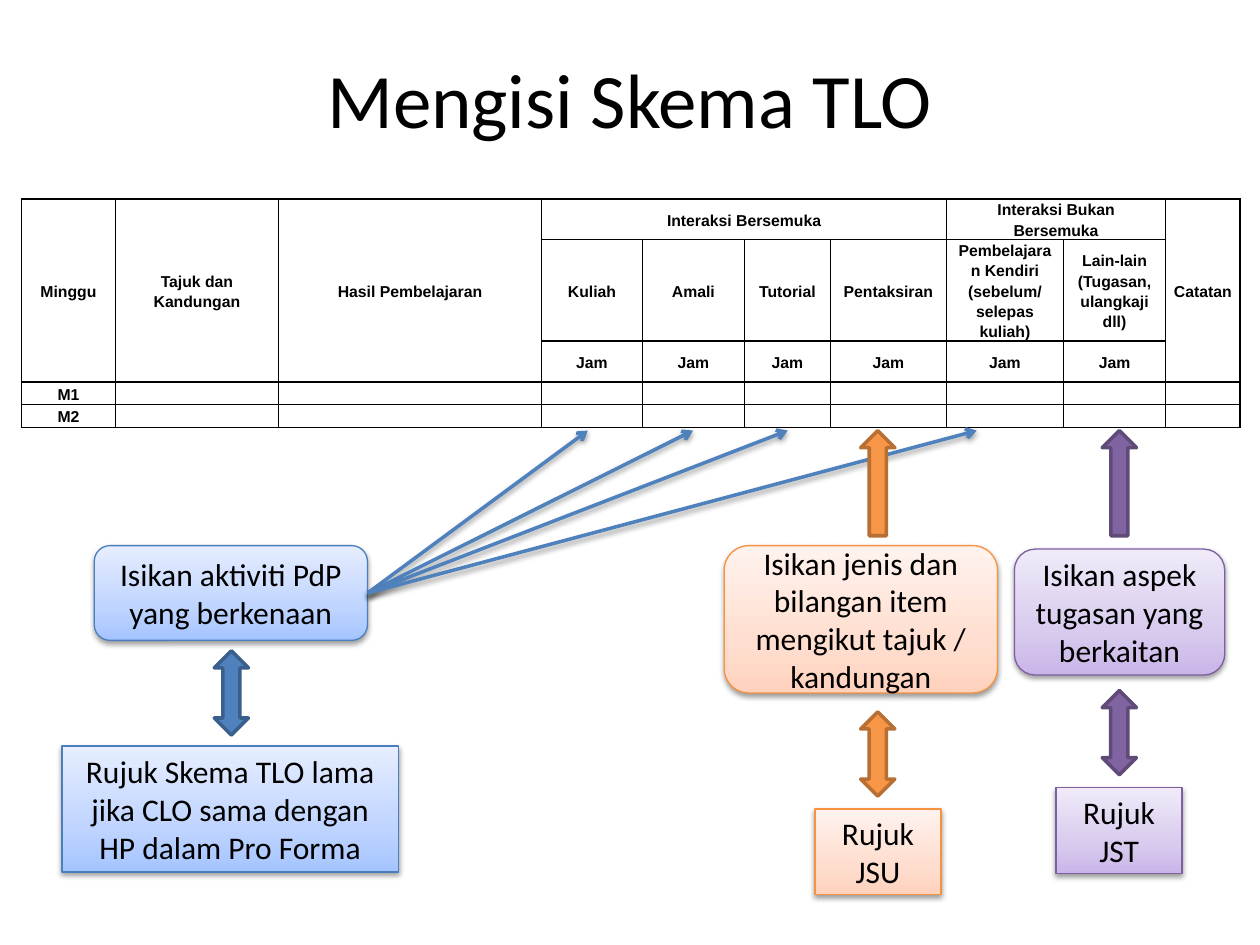
from copy import deepcopy
from dataclasses import dataclass

from lxml import etree
from pptx import Presentation
from pptx import util as u
from pptx.dml.color import RGBColor
from pptx.enum import shapes, text
from pptx.oxml import parse_xml
from pptx.oxml.ns import nsdecls, qn

BLACK = RGBColor(0x00, 0x00, 0x00)


@dataclass
class Palette:
    solid: RGBColor
    solid_edge: RGBColor
    box_edge: RGBColor
    gradient: tuple


BLUE = Palette(
    RGBColor(0x4F, 0x81, 0xBD), RGBColor(0x3A, 0x5F, 0x8C), RGBColor(0x4B, 0x7E, 0xBC),
    (RGBColor(0xA4, 0xC4, 0xFF), RGBColor(0xBF, 0xD4, 0xFF), RGBColor(0xE6, 0xEE, 0xFF)))
ORANGE = Palette(
    RGBColor(0xF7, 0x96, 0x46), RGBColor(0xB7, 0x6F, 0x34), RGBColor(0xF6, 0x92, 0x40),
    (RGBColor(0xFF, 0xD2, 0xBD), RGBColor(0xFF, 0xDE, 0xD0), RGBColor(0xFF, 0xF2, 0xED)))
PURPLE = Palette(
    RGBColor(0x80, 0x64, 0xA2), RGBColor(0x5F, 0x4A, 0x78), RGBColor(0x7D, 0x60, 0xA0),
    (RGBColor(0xC9, 0xB5, 0xE8), RGBColor(0xD8, 0xCB, 0xEE), RGBColor(0xF0, 0xEA, 0xF9)))

RECT = shapes.MSO_SHAPE.RECTANGLE
ROUNDED = shapes.MSO_SHAPE.ROUNDED_RECTANGLE
DOUBLE_ARROW = shapes.MSO_SHAPE.UP_DOWN_ARROW
DOWN_ARROW = shapes.MSO_SHAPE.DOWN_ARROW

TITLE_FONT = {"name": "Calibri", "size": u.Pt(44)}
BOX_FONT = {"name": "Calibri", "size": u.Pt(18)}
CELL_FONT = {"name": "Arial", "size": u.Pt(9), "bold": True}
CELL_FORMAT = {"margin_left": u.Cm(0.16), "margin_right": u.Cm(0.16),
               "margin_top": 0, "margin_bottom": 0,
               "vertical_anchor": text.MSO_ANCHOR.MIDDLE}

COLUMN_WIDTHS = (1.9, 3.28, 5.31, 2.03, 2.06, 1.73, 2.34, 2.36, 2.06, 1.5)
ROW_HEIGHTS = (0.81, 2.05, 0.81, 0.46, 0.46)
SCHEME = (
    ("Minggu", "Tajuk dan Kandungan", "Hasil Pembelajaran", "Interaksi Bersemuka",
     "", "", "", "Interaksi Bukan Bersemuka", "", "Catatan"),
    ("", "", "", "Kuliah", "Amali", "Tutorial", "Pentaksiran",
     "Pembelajaran Kendiri (sebelum/ selepas kuliah)",
     "Lain-lain (Tugasan, ulangkaji dll)", ""),
    ("",) * 3 + ("Jam",) * 6 + ("",),
    ("M1",) + ("",) * 9,
    ("M2",) + ("",) * 9,
)
MERGES = [((0, column), (2, column)) for column in (0, 1, 2, 9)]
MERGES += [((0, 3), (0, 6)), ((0, 7), (0, 8))]


def apply(target, values):
    for name, value in values.items():
        setattr(target, name, value)


def place(item, left, top, width, height):
    apply(item, {"left": u.Cm(left), "top": u.Cm(top),
                 "width": u.Cm(width), "height": u.Cm(height)})


def write(para, words, font):
    para.alignment = text.PP_ALIGN.CENTER
    span = para.add_run()
    span.text = words
    apply(span.font, font)
    span.font.color.rgb = BLACK


def soft_shadow():
    return parse_xml(
        f'<a:outerShdw {nsdecls("a")} blurRad="40000" dist="20000" dir="5400000" '
        'rotWithShape="0"><a:srgbClr val="000000"><a:alpha val="38000"/></a:srgbClr>'
        '</a:outerShdw>')


class SlideBuilder:
    def __init__(self, slide):
        self.slide = slide

    def title(self, words):
        title = self.slide.shapes.title
        place(title, 1.27, 0.76, 22.86, 2.41)
        title.text_frame.vertical_anchor = text.MSO_ANCHOR.MIDDLE
        write(title.text_frame.paragraphs[0], words, TITLE_FONT)

    def table(self, left, top):
        frame = self.slide.shapes.add_table(
            len(ROW_HEIGHTS), len(COLUMN_WIDTHS), u.Cm(left), u.Cm(top),
            u.Cm(sum(COLUMN_WIDTHS)), u.Cm(sum(ROW_HEIGHTS)))
        table = frame.table
        apply(table, {"first_row": False, "horz_banding": False})
        for column, width in zip(table.columns, COLUMN_WIDTHS):
            column.width = u.Cm(width)
        for row, height in zip(table.rows, ROW_HEIGHTS):
            row.height = u.Cm(height)
        for row, labels in zip(table.rows, SCHEME):
            for cell, label in zip(row.cells, labels):
                self.cell(cell, label)
        for first, last in MERGES:
            table.cell(*first).merge(table.cell(*last))

    def cell(self, cell, label):
        apply(cell, CELL_FORMAT)
        properties = cell._tc.get_or_add_tcPr()
        for side in ("lnL", "lnR", "lnT", "lnB"):
            properties.append(parse_xml(
                f'<a:{side} {nsdecls("a")} w="12700"><a:solidFill>'
                f'<a:srgbClr val="{BLACK}"/></a:solidFill></a:{side}>'))
        cell.fill.background()
        para = cell.text_frame.paragraphs[0]
        para.line_spacing = 1.15
        if label:
            write(para, label, CELL_FONT)
        else:
            para._p.get_or_add_endParaRPr().set("sz", "900")

    def shape(self, kind, left, top, width, height, edge, weight):
        shape = self.slide.shapes.add_shape(
            kind, u.Cm(left), u.Cm(top), u.Cm(width), u.Cm(height))
        shape.shadow.inherit = False
        shape.line.color.rgb = edge
        shape.line.width = u.Pt(weight)
        return shape

    def box(self, kind, left, top, width, height, words, palette):
        box = self.shape(kind, left, top, width, height, palette.box_edge, 0.75)
        box.fill.gradient()
        box.fill.gradient_angle = 90
        stops = box._element.spPr.find(".//" + qn("a:gsLst"))
        stops.insert(1, deepcopy(stops[0]))
        for stop, position, color in zip(
                box.fill.gradient_stops, (0, 0.35, 1), palette.gradient):
            stop.position = position
            stop.color.rgb = color
        box._element.spPr.find(qn("a:effectLst")).append(soft_shadow())
        apply(box.text_frame, {"word_wrap": True,
                               "vertical_anchor": text.MSO_ANCHOR.MIDDLE})
        write(box.text_frame.paragraphs[0], words, BOX_FONT)
        return box

    def block_arrow(self, kind, left, top, height, palette, rotation=0):
        arrow = self.shape(kind, left, top, 0.69, height, palette.solid_edge, 2)
        arrow.fill.solid()
        arrow.fill.fore_color.rgb = palette.solid
        arrow.rotation = rotation

    def pointer(self, box, x, y):
        """Draw a thin arrow from the right side of a box to a point."""
        line = self.slide.shapes.add_connector(
            shapes.MSO_CONNECTOR.STRAIGHT, box.left + box.width,
            box.top + box.height // 2, u.Cm(x), u.Cm(y))
        line.begin_connect(box, 3)
        line.line.color.rgb = BLUE.solid
        line.line.width = u.Pt(2)
        etree.SubElement(line.line._ln, qn("a:tailEnd"), type="arrow")
        effects = etree.SubElement(line._element.spPr, qn("a:effectLst"))
        effects.append(soft_shadow())


def main():
    deck = Presentation()
    deck.slide_width, deck.slide_height = u.Cm(25.4), u.Cm(19.05)
    page = SlideBuilder(deck.slides.add_slide(deck.slide_layouts[5]))
    page.title("Mengisi Skema TLO")
    page.table(0.43, 4.01)

    page.block_arrow(DOUBLE_ARROW, 4.32, 13.12, 1.7, BLUE)
    page.box(RECT, 1.25, 15.04, 6.78, 2.54,
             "Rujuk Skema TLO lama jika CLO sama dengan HP dalam Pro Forma", BLUE)
    activity = page.box(ROUNDED, 1.9, 11, 5.51, 1.91,
                        "Isikan aktiviti PdP yang berkenaan", BLUE)
    for x in (11.85, 13.97, 15.88, 19.69):
        page.pointer(activity, x, 8.68)

    page.box(ROUNDED, 14.6, 11, 5.51, 2.97,
             "Isikan jenis dan bilangan item mengikut tajuk / kandungan", ORANGE)
    page.box(RECT, 16.43, 16.31, 2.54, 1.73, "Rujuk JSU", ORANGE)
    page.box(ROUNDED, 20.45, 11.07, 4.24, 2.54,
             "Isikan aspek tugasan yang berkaitan", PURPLE)
    page.box(RECT, 21.29, 15.88, 2.54, 1.73, "Rujuk JST", PURPLE)
    for left, lower_top, palette in ((17.35, 14.35, ORANGE), (22.22, 13.92, PURPLE)):
        page.block_arrow(DOWN_ARROW, left, 8.68, 2.12, palette, rotation=180)
        page.block_arrow(DOUBLE_ARROW, left, lower_top, 1.7, palette)

    deck.save("out.pptx")


if __name__ == "__main__":
    main()
